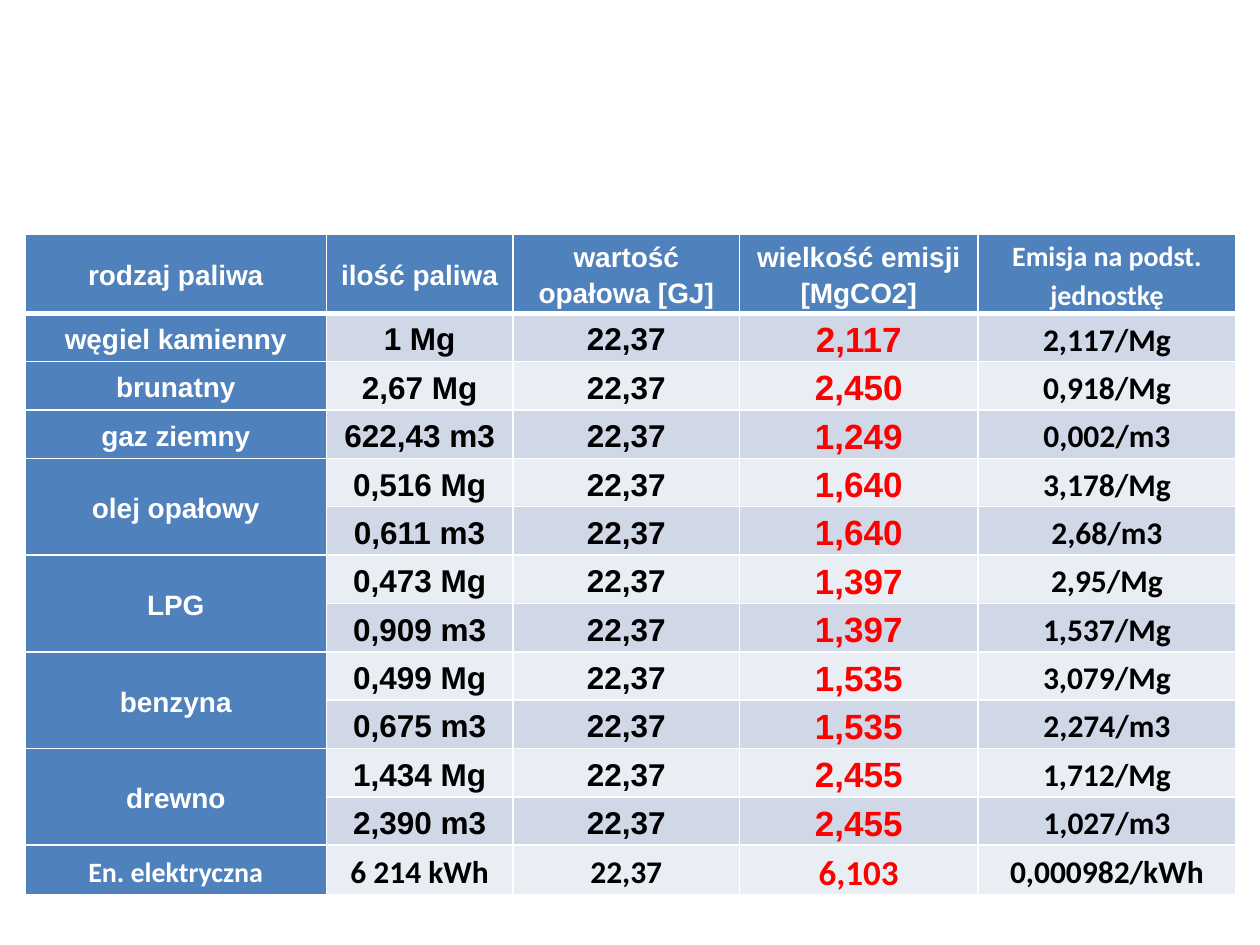
"""Build a slide with a table of fuels, their heating values and CO2 emissions."""
from lxml import etree
from pptx import Presentation
from pptx.dml.color import RGBColor
from pptx.enum import text
from pptx.oxml import ns
from pptx.util import Pt

WHITE = RGBColor(0xFF, 0xFF, 0xFF)
BLACK = RGBColor(0x00, 0x00, 0x00)
RED = RGBColor(0xFF, 0x00, 0x00)
BLUE = RGBColor(0x4F, 0x81, 0xBD)
BAND_DARK = RGBColor(0xD0, 0xD8, 0xE8)
BAND_LIGHT = RGBColor(0xE9, 0xED, 0xF4)

HEADINGS = ["rodzaj paliwa", "ilość paliwa", "wartość opałowa [GJ]",
            "wielkość emisji [MgCO2]", "Emisja na podst. jednostkę"]
HEATING_VALUE = "22,37"
FUELS = [
    ("węgiel kamienny", [("1 Mg", "2,117", "2,117/Mg")]),
    ("brunatny", [("2,67 Mg", "2,450", "0,918/Mg")]),
    ("gaz ziemny", [("622,43 m3", "1,249", "0,002/m3")]),
    ("olej opałowy", [("0,516 Mg", "1,640", "3,178/Mg"), ("0,611 m3", "1,640", "2,68/m3")]),
    ("LPG", [("0,473 Mg", "1,397", "2,95/Mg"), ("0,909 m3", "1,397", "1,537/Mg")]),
    ("benzyna", [("0,499 Mg", "1,535", "3,079/Mg"), ("0,675 m3", "1,535", "2,274/m3")]),
    ("drewno", [("1,434 Mg", "2,455", "1,712/Mg"), ("2,390 m3", "2,455", "1,027/m3")]),
    ("En. elektryczna", [("6 214 kWh", "6,103", "0,000982/kWh")]),
]
COLUMN_WIDTHS = [172.1, 106.6, 129.6, 136.1, 147.6]
HEADER_HEIGHT = 43.4
ROW_HEIGHT = 27.65


def add_border(cell, side, width):
    line = etree.SubElement(cell._tc.get_or_add_tcPr(), ns.qn(f"a:{side}"), w=str(Pt(width)))
    fill = etree.SubElement(line, ns.qn("a:solidFill"))
    etree.SubElement(fill, ns.qn("a:srgbClr"), val=str(WHITE))


rows = [HEADINGS]
merges = []
for fuel, variants in FUELS:
    if len(variants) > 1:
        merges.append((len(rows), len(rows) + len(variants) - 1))
    for index, (amount, emission, unit_emission) in enumerate(variants):
        name = "" if index else fuel
        rows.append([name, amount, HEATING_VALUE, emission, unit_emission])
last_row = len(rows) - 1
last_column = len(HEADINGS) - 1

deck = Presentation()
deck.slide_width, deck.slide_height = Pt(720), Pt(540)
page = deck.slides.add_slide(deck.slide_layouts[6])
frame = page.shapes.add_table(len(rows), len(HEADINGS), Pt(14.4), Pt(134), Pt(sum(COLUMN_WIDTHS)),
                              Pt(HEADER_HEIGHT + ROW_HEIGHT * last_row))
table = frame.table
table.first_col = True
for column, width in zip(table.columns, COLUMN_WIDTHS):
    column.width = Pt(width)

for r, values in enumerate(rows):
    table.rows[r].height = Pt(ROW_HEIGHT if r else HEADER_HEIGHT)
    for c, value in enumerate(values):
        cell = table.cell(r, c)
        cell.margin_left = cell.margin_right = Pt(3.6)
        cell.margin_top = cell.margin_bottom = Pt(0)
        cell.vertical_anchor = text.MSO_ANCHOR.MIDDLE
        for side, width in [("lnL", 1), ("lnR", 1), ("lnT", 3 if r == 1 else 1),
                            ("lnB", 3 if r == 0 else 1)]:
            add_border(cell, side, width)
        if r == 0 or c == 0:
            fill, colour, size = BLUE, WHITE, 16
        else:
            fill = BAND_DARK if r % 2 else BAND_LIGHT
            colour, size = (RED, 20) if c == 3 else (BLACK, 18)
        cell.fill.solid()
        cell.fill.fore_color.rgb = fill
        para = cell.text_frame.paragraphs[0]
        para.text = value
        para.alignment = text.PP_ALIGN.CENTER
        para.line_spacing = 1.15
        para.font.size = Pt(size)
        for span in para.runs:
            span.font.name = "Calibri" if r == last_row or c == last_column else "Arial"
            span.font.size = Pt(size)
            span.font.bold = True
            span.font.color.rgb = colour

for first, last in merges:
    table.cell(first, 0).merge(table.cell(last, 0))

deck.save("out.pptx")
